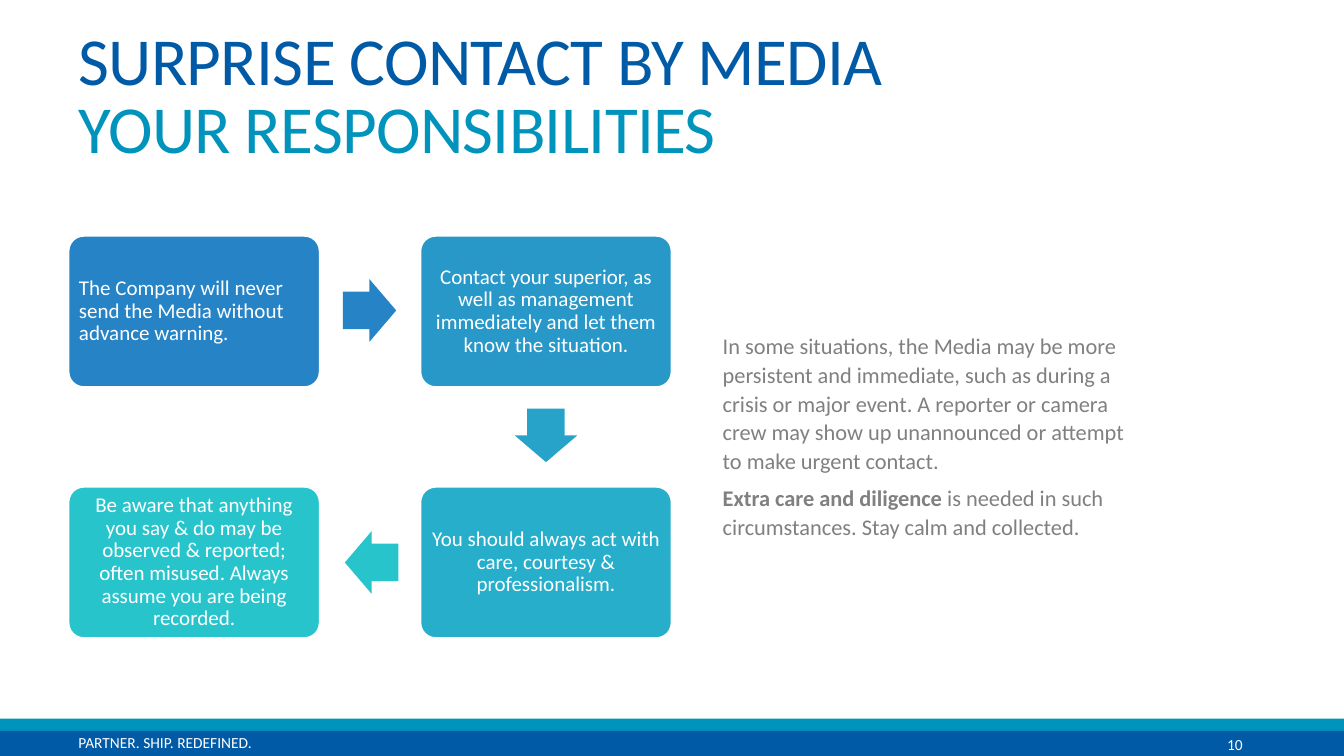
from pptx import Presentation
from pptx.dml.color import RGBColor
from pptx.enum.shapes import MSO_SHAPE
from pptx.enum.text import MSO_ANCHOR, MSO_AUTO_SIZE, PP_ALIGN
from pptx.util import Inches, Pt

COLORS = {
    "navy": "005AA5", "teal": "0093BB", "white": "FFFFFF", "gray": "808080",
    "step1": "2683C6", "step2": "2798C8", "turn": "27A3C9",
    "step3": "27AECA", "step4": "28C4CC",
}


def add_run(p, text, size, color, bold=False):
    r = p.add_run()
    r.text = text
    r.font.name = "Calibri"
    r.font.size = Pt(size)
    r.font.bold = bold
    r.font.color.rgb = RGBColor.from_string(COLORS[color])
    return r


def add_filled(kind, x, y, w, h, color):
    sp = s.shapes.add_shape(kind, Inches(x), Inches(y), Inches(w), Inches(h))
    sp.shadow.inherit = False
    sp.fill.solid()
    sp.fill.fore_color.rgb = RGBColor.from_string(COLORS[color])
    sp.line.fill.background()
    return sp


prs = Presentation()
prs.slide_width = Inches(13.33)
prs.slide_height = Inches(7.5)
s = prs.slides.add_slide(prs.slide_layouts[5])

# Footer bands, motto and page number
add_filled(MSO_SHAPE.RECTANGLE, 0, 7.13, 13.33, 0.14, "teal")
add_filled(MSO_SHAPE.RECTANGLE, 0, 7.25, 13.33, 0.25, "navy")
for text, x, y, w, h, inset in [
    ("PARTNER. SHIP. REDEFINED.", 0.68, 7.22, 2.73, 0.29, 0.1),
    ("10", 12.17, 7.24, 0.31, 0.25, 0),
]:
    tf = s.shapes.add_textbox(Inches(x), Inches(y), Inches(w), Inches(h)).text_frame
    tf.word_wrap = True
    tf.margin_left = tf.margin_right = Inches(inset)
    add_run(tf.paragraphs[0], text, 11, "white")

# Title
title = s.shapes.title
title.left, title.top = Inches(0.68), Inches(0.12)
title.width, title.height = Inches(10.71), Inches(1.59)
tf = title.text_frame
tf.word_wrap = True
tf.auto_size = MSO_AUTO_SIZE.NONE
tf.vertical_anchor = MSO_ANCHOR.BOTTOM
p = tf.paragraphs[0]
p.alignment = PP_ALIGN.LEFT
p.line_spacing = 0.85
title_runs = [add_run(p, "SURPRISE CONTACT BY MEDIA", 48, "navy")]
p.add_line_break()
title_runs.append(add_run(p, "YOUR RESPONSIBILITIES", 48, "teal"))
for r in title_runs:
    r._r.get_or_add_rPr().set("spc", "-50")

# Explanation on the right
tf = s.shapes.add_textbox(Inches(7.07), Inches(3.23), Inches(4.33), Inches(2.19)).text_frame
tf.word_wrap = True
p = tf.paragraphs[0]
p.line_spacing = 1.07
add_run(p, "In some situations, the Media may be more persistent and immediate, such as "
           "during a crisis or major event. A reporter or camera crew may show up "
           "unannounced or attempt to make urgent contact.", 16, "gray")
p = tf.add_paragraph()
p.line_spacing = 1.07
p.space_before = Pt(6)
add_run(p, "Extra care and diligence", 16, "gray", bold=True)
add_run(p, " is needed in such circumstances. Stay calm and collected.", 16, "gray")

# Four steps, clockwise from the top left
LEFT, TOP, COL_STEP, ROW_STEP = 0.68, 2.34, 3.49, 2.49
steps = [
    (0, 0, "step1", PP_ALIGN.LEFT,
     "The Company will never send the Media without advance warning."),
    (1, 0, "step2", PP_ALIGN.CENTER,
     "Contact your superior, as well as management immediately and let them know "
     "the situation."),
    (1, 1, "step3", PP_ALIGN.CENTER,
     "You should always act with care, courtesy & professionalism."),
    (0, 1, "step4", PP_ALIGN.CENTER,
     "Be aware that anything you say & do may be observed & reported; often misused. "
     "Always assume you are being recorded."),
]
for col, row, color, align, text in steps:
    sp = add_filled(MSO_SHAPE.ROUNDED_RECTANGLE, LEFT + col * COL_STEP,
                    TOP + row * ROW_STEP, 2.49, 1.5, color)
    sp.adjustments[0] = 0.1
    sp.line.color.rgb = RGBColor.from_string(COLORS["white"])
    sp.line.width = Pt(1.25)
    tf = sp.text_frame
    tf.word_wrap = True
    tf.vertical_anchor = MSO_ANCHOR.MIDDLE
    tf.margin_left = tf.margin_right = tf.margin_top = tf.margin_bottom = Inches(0.06)
    p = tf.paragraphs[0]
    p.alignment = align
    p.line_spacing = 0.9
    add_run(p, text, 15, "white")

# Arrows between the steps
for x, y, angle, color in [
    (3.4, 2.77, 0, "step1"),
    (5.15, 4.01, 90, "turn"),
    (3.42, 5.27, 180, "step4"),
]:
    sp = add_filled(MSO_SHAPE.RIGHT_ARROW, x, y, 0.53, 0.62, color)
    sp.adjustments[0] = 0.6
    sp.adjustments[1] = 0.5
    sp.rotation = angle

prs.save("out.pptx")
